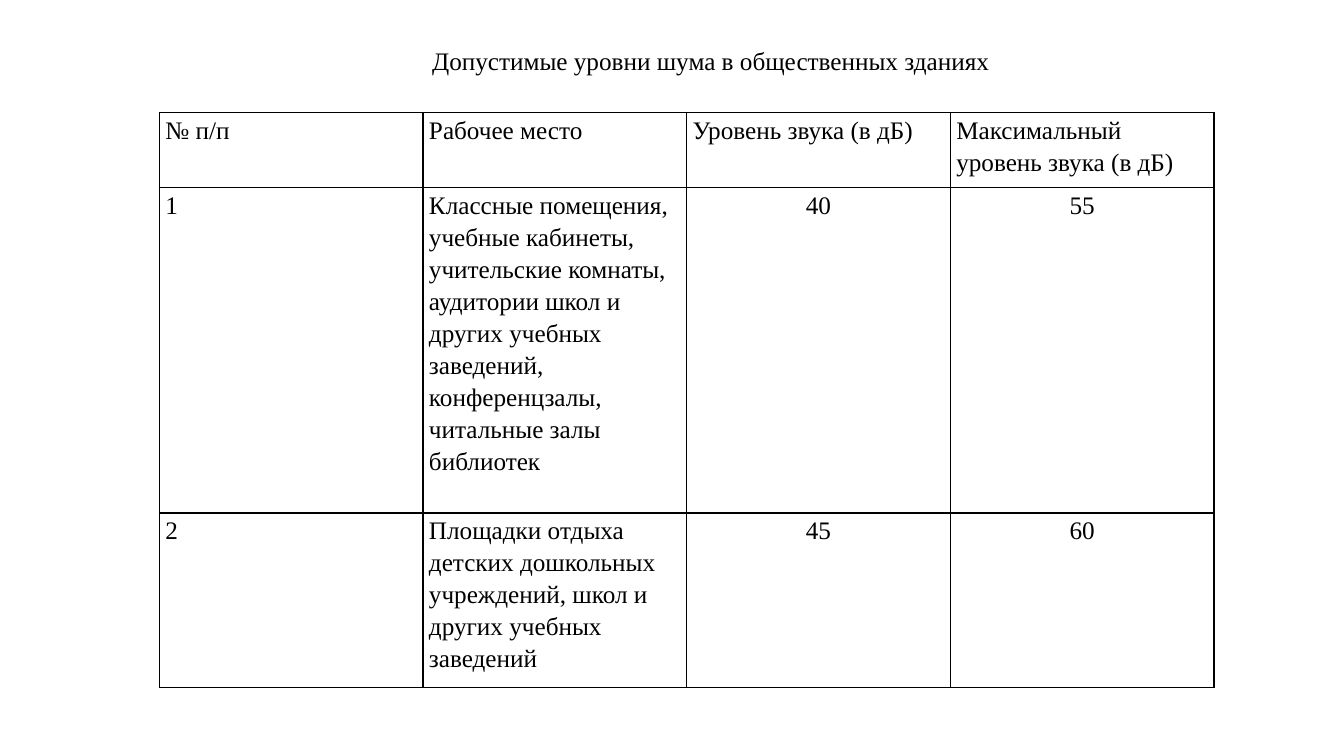
from lxml.etree import SubElement
from pptx import Presentation
from pptx.dml.color import RGBColor
from pptx.enum.text import MSO_ANCHOR, PP_ALIGN
from pptx.oxml.ns import qn
from pptx.util import Inches, Pt

INK = "000000"
FONT = {"name": "Times New Roman", "size": Pt(18), "bold": False}
TITLE = "Допустимые уровни шума в общественных зданиях"
TITLE_BOX = (4.05, 0.4, 6, 0.4)
TABLE_BOX = (1.58, 1.12, 10.46, 5.7)
ROW_HEIGHTS = (0.74, 3.23, 1.73)
NOISE_LEVELS = (
    ("№ п/п", "Рабочее место", "Уровень звука (в дБ)",
     "Максимальный уровень звука (в дБ)"),
    ("1", "Классные помещения, учебные кабинеты, учительские комнаты, "
     "аудитории школ и других учебных заведений, конференцзалы, "
     "читальные залы библиотек", "40", "55"),
    ("2", "Площадки отдыха детских дошкольных учреждений, школ и других "
     "учебных заведений", "45", "60"),
)


def color(value):
    return RGBColor.from_string(value)


def apply(target, values):
    for name, value in values.items():
        setattr(target, name, value)


def write(frame, text, align, line_spacing=1.0):
    para = frame.paragraphs[0]
    apply(para, {"alignment": align, "line_spacing": line_spacing})
    span = para.add_run()
    span.text = text
    apply(span.font, FONT)
    span.font.color.rgb = color(INK)


def add_borders(cell):
    properties = cell._tc.get_or_add_tcPr()
    for side in ("a:lnL", "a:lnR", "a:lnT", "a:lnB"):
        line = SubElement(properties, qn(side), w=str(Pt(1)))
        fill = SubElement(line, qn("a:solidFill"))
        SubElement(fill, qn("a:srgbClr"), val=INK)


def place_title(page, box):
    title = page.shapes.title
    left, top, width, height = map(Inches, box)
    apply(title, {"left": left, "top": top, "width": width, "height": height})
    apply(title.text_frame, {"word_wrap": True,
                             "vertical_anchor": MSO_ANCHOR.MIDDLE})
    write(title.text_frame, TITLE, PP_ALIGN.CENTER)


def place_noise_table(page, box):
    rows, columns = len(NOISE_LEVELS), len(NOISE_LEVELS[0])
    table = page.shapes.add_table(rows, columns, *map(Inches, box)).table
    apply(table, {"first_row": False, "horz_banding": False})
    for column in table.columns:
        column.width = Inches(box[2] / columns)
    for row, height in zip(table.rows, ROW_HEIGHTS):
        row.height = Inches(height)
    for row_index, texts in enumerate(NOISE_LEVELS):
        for column_index, text in enumerate(texts):
            cell = table.cell(row_index, column_index)
            apply(cell, {"margin_left": Inches(0.06), "margin_right": Inches(0.06),
                         "margin_top": 0, "margin_bottom": 0})
            add_borders(cell)
            cell.fill.background()
            is_level = row_index > 0 and column_index > 1
            align = PP_ALIGN.CENTER if is_level else PP_ALIGN.LEFT
            write(cell.text_frame, text, align, 1.15)


def main():
    deck = Presentation()
    apply(deck, {"slide_width": Inches(13.33), "slide_height": Inches(7.5)})
    page = deck.slides.add_slide(deck.slide_layouts[5])
    place_title(page, TITLE_BOX)
    place_noise_table(page, TABLE_BOX)
    deck.save("out.pptx")


if __name__ == "__main__":
    main()
